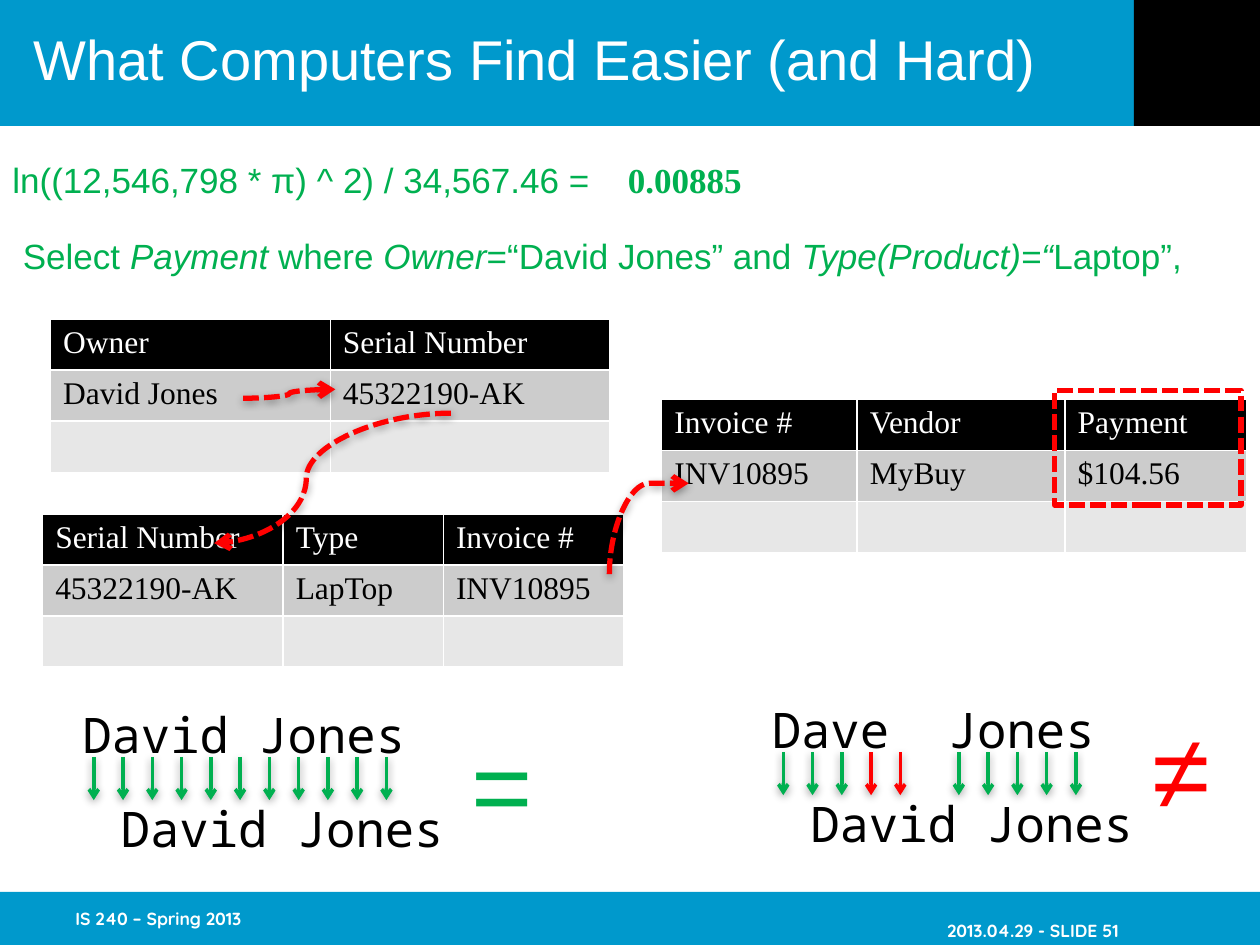
import lxml.etree
import pptx
import pptx.dml.color
import pptx.enum.dml
import pptx.enum.shapes
import pptx.enum.text
import pptx.oxml
import pptx.oxml.ns
import pptx.util

Cm = pptx.util.Cm
Pt = pptx.util.Pt
ALIGN = pptx.enum.text.PP_ALIGN
ANCHOR = pptx.enum.text.MSO_ANCHOR
CONNECTOR = pptx.enum.shapes.MSO_CONNECTOR
DASH = pptx.enum.dml.MSO_LINE.SQUARE_DOT

COLORS = {
    "blue": "0099CC", "black": "000000", "white": "FFFFFF", "green": "00B050",
    "red": "FF0000", "row": "CCCCCC", "empty_row": "E7E7E7",
}
FORMULA = {"name": "Arial", "size": Pt(20)}
RESULT = {"name": "Times New Roman", "size": Pt(20), "bold": True}
CELL = {"name": "Times New Roman", "size": Pt(18), "bold": False}
MONO = {"name": "Noto Sans Mono", "size": Pt(28)}
SIGN = {"name": "Arial", "size": Pt(60)}
FOOTER = {"name": "Quicksand", "size": Pt(10), "bold": True}
TITLE = {"name": "Arial", "size": Pt(32)}


def color(name):
    """Return the named colour."""
    return pptx.dml.color.RGBColor.from_string(COLORS[name])


def apply_format(target, values):
    """Set every attribute of the target from a dict."""
    for name, value in values.items():
        setattr(target, name, value)


def add_text(slide, box, runs, font, color_name, align=ALIGN.LEFT, frame=None):
    """Add a one-paragraph text box from (text, italic) runs."""
    shape = slide.shapes.add_textbox(*map(Cm, box))
    apply_format(shape.text_frame, {"word_wrap": True, **(frame or {})})
    paragraph = shape.text_frame.paragraphs[0]
    paragraph.alignment = align
    for text, italic in runs:
        run = paragraph.add_run()
        run.text = text
        apply_format(run.font, {**font, "italic": italic})
        run.font.color.rgb = color(color_name)


def add_bar(slide, box, color_name):
    """Add a plain filled rectangle."""
    shape = slide.shapes.add_shape(pptx.enum.shapes.MSO_SHAPE.RECTANGLE, *map(Cm, box))
    shape.shadow.inherit = False
    shape.fill.solid()
    shape.fill.fore_color.rgb = color(color_name)
    shape.line.fill.background()


def add_arrow(slide, begin, end, color_name, width, kind=CONNECTOR.STRAIGHT, dash=None):
    """Add a connector with an open arrowhead and a soft shadow."""
    arrow = slide.shapes.add_connector(kind, *map(Cm, (*begin, *end)))
    apply_format(arrow.line, {"width": Pt(width), "dash_style": dash})
    arrow.line.color.rgb = color(color_name)
    line = arrow.line._get_or_add_ln()
    lxml.etree.SubElement(line, pptx.oxml.ns.qn("a:tailEnd"), type="arrow")
    arrow._element.spPr.append(pptx.oxml.parse_xml(
        f'<a:effectLst {pptx.oxml.ns.nsdecls("a")}>'
        '<a:outerShdw blurRad="63500" dist="22000" dir="5400000" rotWithShape="0">'
        f'<a:srgbClr val="{COLORS["black"]}"><a:alpha val="36000"/></a:srgbClr>'
        '</a:outerShdw></a:effectLst>'))
    return arrow


def add_link(slide, begin, end, bend=50000, rotation=0):
    """Add a dashed curved arrow between two table cells."""
    link = add_arrow(slide, begin, end, "red", 3, CONNECTOR.CURVE, DASH)
    properties = link._element.spPr
    properties.find(pptx.oxml.ns.qn("a:xfrm")).set("rot", str(rotation * 60000))
    guides = properties.find(".//" + pptx.oxml.ns.qn("a:avLst"))
    lxml.etree.SubElement(guides, pptx.oxml.ns.qn("a:gd"), name="adj1", fmla=f"val {bend}")


def add_header(slide, box):
    """Add the title band with its black corner."""
    left, top, width, height = box
    add_bar(slide, box, "blue")
    add_bar(slide, (left + width - height, top, height, height), "black")
    add_text(slide, (left + 0.43, top + 0.43, 22.28, 1.47),
             [("What Computers Find Easier (and Hard)", False)], TITLE, "white",
             frame={"vertical_anchor": ANCHOR.MIDDLE})


def add_footer(slide, box):
    """Add the footer band with course name and slide number."""
    left, top, width, height = box
    frame = {"vertical_anchor": ANCHOR.MIDDLE, "margin_right": 0}
    add_bar(slide, box, "blue")
    add_text(slide, (left + 1.27, top, 5.28, height),
             [("IS 240 – Spring 2013", False)], FOOTER, "white", frame=frame)
    add_text(slide, (left + 17.27, top + 0.47, 5.28, 0.6),
             [("2013.04.29 - SLIDE 51", False)], FOOTER, "white", ALIGN.RIGHT,
             {**frame, "margin_top": 0, "margin_bottom": 0})


def add_queries(slide, box):
    """Add the calculation with its result and the query below."""
    left, top, width, height = box
    add_text(slide, (left, top, 12.32, height),
             [("ln((12,546,798 * π) ^ 2) / 34,567.46 =", False)], FORMULA, "green",
             frame={"word_wrap": False})
    add_text(slide, (left + 12.08, top, 3.45, height), [("0.00885", False)],
             RESULT, "green", ALIGN.CENTER)
    query = [("Select ", False), ("Payment", True), (" where ", False), ("Owner", True),
             ("=“David Jones” and ", False), ("Type(Product)=“", True), ("Laptop”,", False)]
    add_text(slide, (left, top + 1.53, width, height), query, FORMULA, "green", ALIGN.CENTER)


def add_records(slide, position, widths, headings, values):
    """Add a table with a heading row, one record and an empty row."""
    rows = [(headings, "black", "white"), (values, "row", "black"),
            ([""] * len(widths), "empty_row", "black")]
    height = 1.03
    table = slide.shapes.add_table(
        len(rows), len(widths), *map(Cm, (*position, sum(widths), height * len(rows)))).table
    for column, width in zip(table.columns, widths):
        column.width = Cm(width)
    for row, (texts, fill, font_color) in zip(table.rows, rows):
        row.height = Cm(height)
        for cell, text in zip(row.cells, texts):
            cell.text = text
            cell.fill.solid()
            cell.fill.fore_color.rgb = color(fill)
            font = cell.text_frame.paragraphs[0].font
            apply_format(font, CELL)
            font.color.rgb = color(font_color)


def add_highlight(slide, box):
    """Add the dashed frame around the answer."""
    frame = slide.shapes.add_shape(pptx.enum.shapes.MSO_SHAPE.RECTANGLE, *map(Cm, box))
    frame.shadow.inherit = False
    frame.fill.background()
    apply_format(frame.line, {"width": Pt(3), "dash_style": DASH})
    frame.line.color.rgb = color("red")


def add_comparison(slide, position, upper, marks, sign, sign_offset, sign_color):
    """Compare two names letter by letter and show the verdict sign."""
    left, top = position
    add_text(slide, (left, top, 7.09, 1.45), [(upper, False)], MONO, "black",
             ALIGN.CENTER, {"word_wrap": False})
    add_text(slide, (left, top + 1.91, 8.64, 1.45), [("David Jones", False)], MONO, "black",
             ALIGN.CENTER)
    pitch, arrow_top, length = 0.59, top + 1.19, 0.87
    mark_colors = {"=": "green", "≠": "red"}
    for index, mark in enumerate(marks):
        if mark in mark_colors:
            x = left + 0.52 + index * pitch
            add_arrow(slide, (x, arrow_top), (x, arrow_top + length), mark_colors[mark], 2)
    add_text(slide, (left + sign_offset[0], top + sign_offset[1], 1.55, 2.82),
             [(sign, False)], SIGN, sign_color, ALIGN.CENTER)


def main():
    """Build the slide and save it."""
    presentation = pptx.Presentation()
    apply_format(presentation, {"slide_width": Cm(25.4), "slide_height": Cm(19.05)})
    slide = presentation.slides.add_slide(presentation.slide_layouts[6])
    add_header(slide, (0, 0, 25.4, 2.54))
    add_footer(slide, (0, 17.98, 25.4, 1.07))
    add_queries(slide, (0, 3.07, 24.29, 1.09))
    add_records(slide, (1.02, 6.43), (5.64, 5.64),
                ("Owner", "Serial Number"), ("David Jones", "45322190-AK"))
    add_records(slide, (0.86, 10.36), (4.85, 3.23, 3.63),
                ("Serial Number", "Type", "Invoice #"), ("45322190-AK", "LapTop", "INV10895"))
    add_records(slide, (13.34, 8.05), (3.94, 4.19, 3.66),
                ("Invoice #", "Vendor", "Payment"), ("INV10895", "MyBuy", "$104.56"))
    add_link(slide, (9.09, 8.33), (4.32, 10.95), bend=61100)
    add_link(slide, (4.9, 8.03), (6.76, 7.85))
    add_link(slide, (14, 11.46), (12.17, 9.86), bend=100000, rotation=90)
    add_highlight(slide, (21.26, 7.87, 3.76, 2.31))
    add_comparison(slide, (1.37, 14.07), "David Jones", "===========", "=", (7.88, 0.31), "green")
    add_comparison(slide, (15.27, 13.97), "Dave  Jones", "===≠≠ =====", "≠", (7.72, 0.1), "red")
    presentation.save("out.pptx")


if __name__ == "__main__":
    main()
